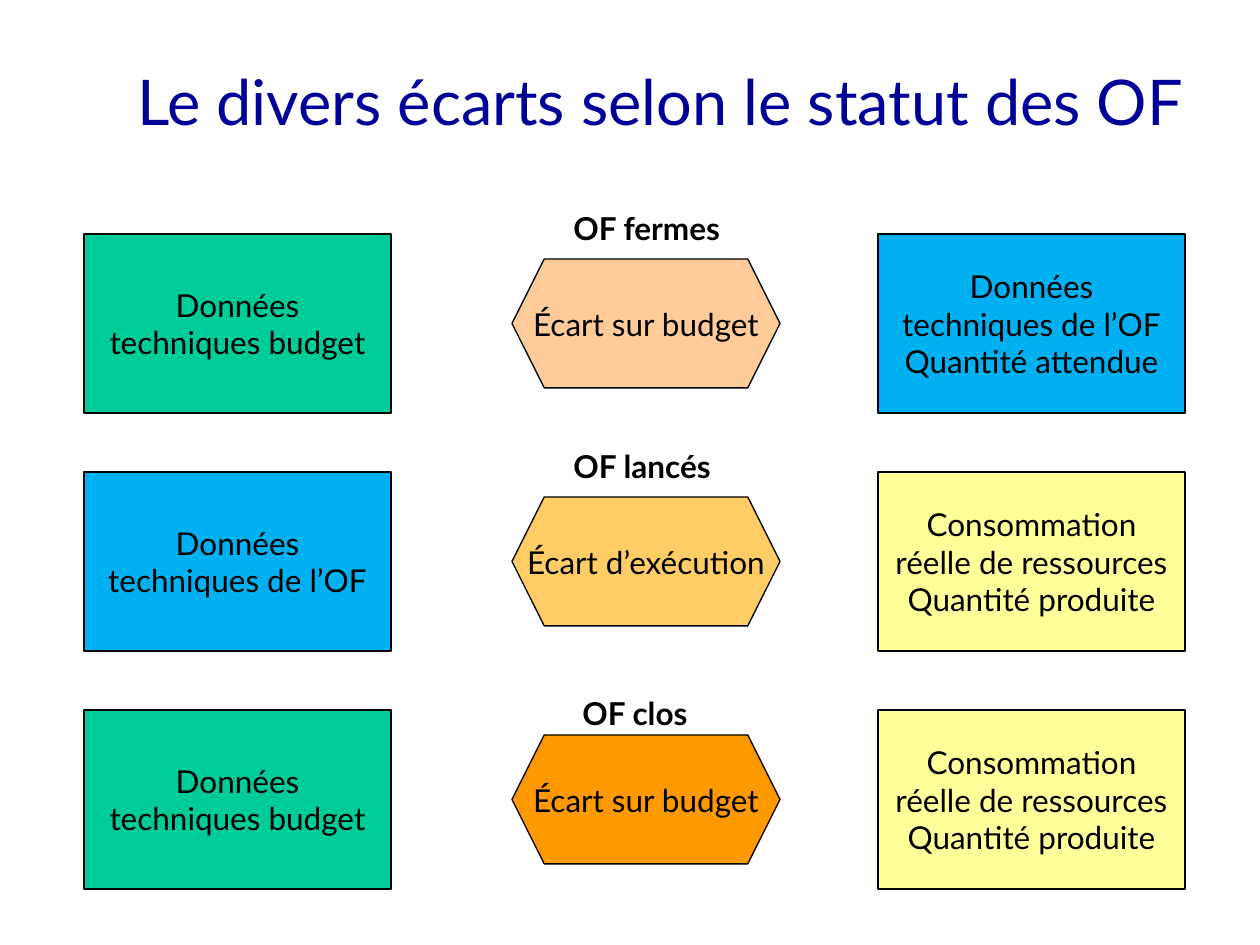
"""Build the slide on variances by production order status."""
from dataclasses import dataclass

from pptx import Presentation
from pptx.dml.color import RGBColor
from pptx.enum.shapes import MSO_SHAPE as Shape
from pptx.enum.text import MSO_ANCHOR as Anchor, MSO_AUTO_SIZE as AutoSize, PP_ALIGN as Align
from pptx.util import Emu, Pt

PX_PER_INCH = 126
COLORS = {
    "title": "000099", "ink": "000000", "budget": "00CC99", "order": "00B0F0",
    "actual": "FFFF99", "firm": "FFCC99", "released": "FFCC66", "closed": "FF9900",
}
BODY = {"name": "Lato", "size": Pt(18), "bold": False}
LABEL = BODY | {"bold": True}
TITLE = BODY | {"size": Pt(36)}
ROW_TOP, ROW_STEP = 234, 238
LEFT_X, HEX_X, RIGHT_X = 84, 512, 878
BOX_W, BOX_H, HEX_W, HEX_H = 307, 179, 268, 129
LABEL_H = 50


@dataclass
class Node:
    text: str
    color: str


@dataclass
class Label:
    text: str
    x: int
    y: int
    w: int


@dataclass
class Row:
    label: Label
    left: Node
    gap: Node
    right: Node


BUDGET = Node("Données techniques budget", "budget")
ORDER = Node("Données techniques de l’OF", "order")
EXPECTED = Node("Données techniques de l’OF\nQuantité attendue", "order")
ACTUAL = Node("Consommation réelle de ressources\nQuantité produite", "actual")
ROWS = [
    Row(Label("OF fermes", 561, 203, 188), BUDGET, Node("Écart sur budget", "firm"), EXPECTED),
    Row(Label("OF lancés", 561, 441, 179), ORDER, Node("Écart d’exécution", "released"), ACTUAL),
    Row(Label("OF clos", 570, 688, 140), BUDGET, Node("Écart sur budget", "closed"), ACTUAL),
]


def px(n: int) -> Emu:
    return Emu(round(n * 914400 / PX_PER_INCH))


def rgb(key: str) -> RGBColor:
    return RGBColor.from_string(COLORS[key])


def write(tf, text: str, font: dict, align: Align, color: str = "ink") -> None:
    tf.text = text
    for p in tf.paragraphs:
        p.alignment = align
        for r in p.runs:
            for name, value in font.items():
                setattr(r.font, name, value)
            r.font.color.rgb = rgb(color)


def add_node(s, node: Node, kind: Shape, x: int, y: int, w: int, h: int) -> None:
    sp = s.shapes.add_shape(kind, px(x), px(y), px(w), px(h))
    sp.shadow.inherit = False
    sp.fill.solid()
    sp.fill.fore_color.rgb = rgb(node.color)
    sp.line.color.rgb = rgb("ink")
    sp.line.width = Pt(0.75)
    tf = sp.text_frame
    tf.vertical_anchor = Anchor.MIDDLE
    tf.word_wrap = kind == Shape.RECTANGLE
    write(tf, node.text, BODY, Align.CENTER)


def add_label(s, label: Label) -> None:
    tf = s.shapes.add_textbox(px(label.x), px(label.y), px(label.w), px(LABEL_H)).text_frame
    tf.word_wrap = False
    tf.auto_size = AutoSize.SHAPE_TO_FIT_TEXT
    write(tf, label.text, LABEL, Align.LEFT)


def add_title(s, text: str) -> None:
    sp = s.shapes.title
    for name, n in {"left": 32, "top": 21, "width": 1164, "height": 158}.items():
        setattr(sp, name, px(n))
    sp.text_frame.vertical_anchor = Anchor.MIDDLE
    write(sp.text_frame, text, TITLE, Align.RIGHT, "title")


def main() -> None:
    prs = Presentation()
    prs.slide_width, prs.slide_height = px(1260), px(945)
    s = prs.slides.add_slide(prs.slide_layouts[5])
    add_title(s, "Le divers écarts selon le statut des OF")
    for i, row in enumerate(ROWS):
        y = ROW_TOP + i * ROW_STEP
        add_node(s, row.gap, Shape.HEXAGON, HEX_X, y + (BOX_H - HEX_H) // 2, HEX_W, HEX_H)
        add_node(s, row.left, Shape.RECTANGLE, LEFT_X, y, BOX_W, BOX_H)
        add_node(s, row.right, Shape.RECTANGLE, RIGHT_X, y, BOX_W, BOX_H)
        add_label(s, row.label)
    prs.save("out.pptx")


if __name__ == "__main__":
    main()
